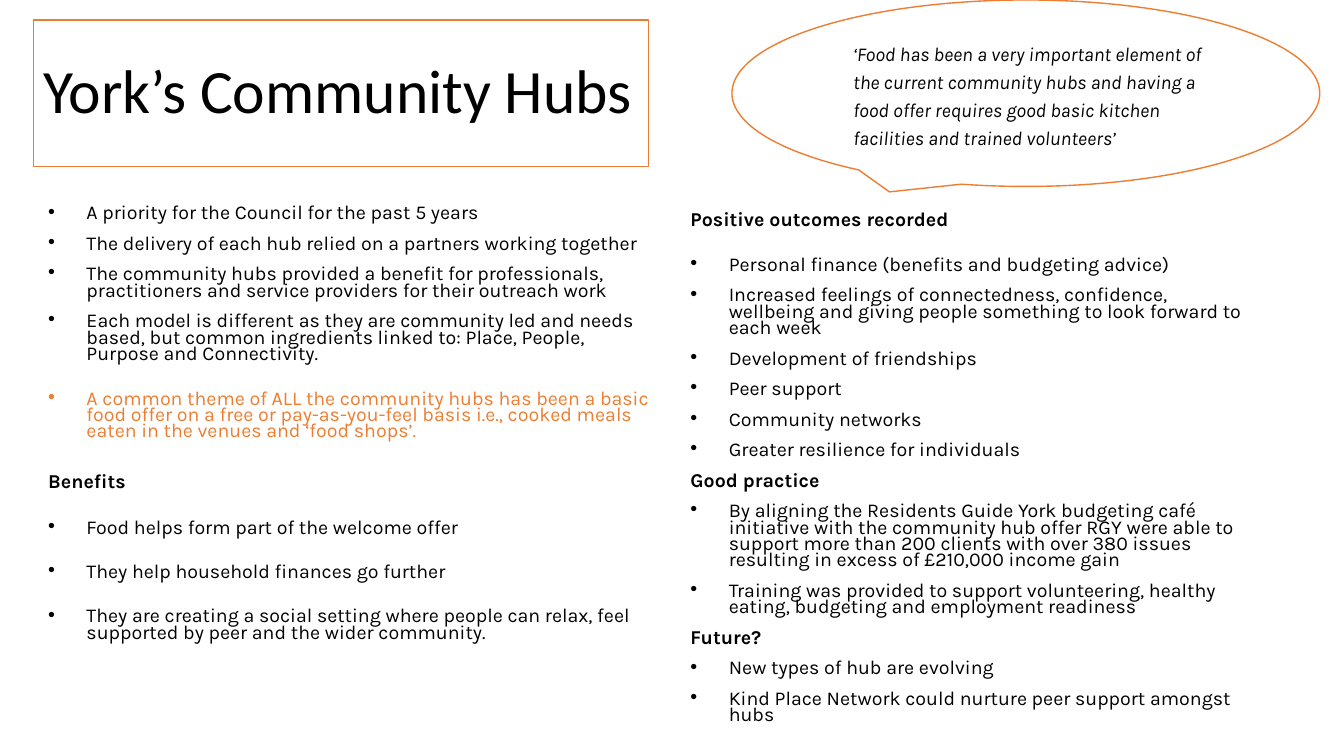
"""Build the York's Community Hubs slide with two text columns and a quote."""
from lxml.etree import SubElement
from pptx import Presentation
from pptx.dml.color import RGBColor
from pptx.enum.shapes import MSO_SHAPE
from pptx.enum.text import MSO_ANCHOR, PP_ALIGN
from pptx.oxml.ns import qn
from pptx.util import Inches, Pt

BLACK, WHITE, ORANGE = "000000", "FFFFFF", "ED7D31"


def color(value):
    return RGBColor.from_string(value)


def style(paragraph, text, font="Karla", size=14, ink=BLACK, spacing=None, before=0, after=0, indent=0, hanging=0):
    paragraph.text = text
    paragraph.alignment = PP_ALIGN.LEFT
    paragraph.font.name = font
    paragraph.font.size = Pt(size)
    paragraph.font.color.rgb = color(ink)
    paragraph.line_spacing = spacing
    paragraph.space_before = Pt(before)
    paragraph.space_after = Pt(after)
    properties = paragraph._p.get_or_add_pPr()
    properties.set("marL", str(Inches(indent)))
    properties.set("indent", str(Inches(-hanging)))
    if hanging:
        SubElement(properties, qn("a:buFont"), typeface="Arial")
        SubElement(properties, qn("a:buChar"), char="•")


prs = Presentation()
prs.slide_width = Inches(13.33)
prs.slide_height = Inches(7.5)
slide = prs.slides.add_slide(prs.slide_layouts[6])

title = slide.shapes.add_shape(MSO_SHAPE.RECTANGLE, Inches(0.33), Inches(0.2), Inches(6.1), Inches(1.45))
quote = slide.shapes.add_shape(MSO_SHAPE.OVAL_CALLOUT, Inches(7.26), Inches(0), Inches(5.83), Inches(1.85))
quote.adjustments[0] = -0.232
quote.adjustments[1] = 0.529
for panel in (title, quote):
    panel.shadow.inherit = False
    panel.fill.solid()
    panel.fill.fore_color.rgb = color(WHITE)
    panel.line.color.rgb = color(ORANGE)
    panel.line.width = Pt(1)
    panel.text_frame.word_wrap = True
    panel.text_frame.vertical_anchor = MSO_ANCHOR.MIDDLE

style(title.text_frame.paragraphs[0], "York’s Community Hubs", font="Calibri", size=44, spacing=0.9)
saying = quote.text_frame.paragraphs[0]
style(
    saying,
    "‘Food has been a very important element of the current community hubs and having a food offer "
    "requires good basic kitchen facilities and trained volunteers’",
    spacing=1.2, after=10, indent=0.25,
)
saying.font.italic = True

# Each entry: kind, space after, text
hubs_and_benefits = [
    ("bullet", 0, "A priority for the Council for the past 5 years"),
    ("bullet", 0, "The delivery of each hub relied on a partners working together"),
    ("bullet", 0, "The community hubs provided a benefit for professionals, practitioners and service "
     "providers for their outreach work"),
    ("bullet", 10, "Each model is different as they are community led and needs based, but common "
     "ingredients linked to: Place, People, Purpose and Connectivity."),
    ("highlight", 10, "A common theme of ALL the community hubs has been a basic food offer on a free or "
     "pay-as-you-feel basis i.e., cooked meals eaten in the venues and ‘food shops’."),
    ("heading", 10, "Benefits"),
    ("bullet", 10, "Food helps form part of the welcome offer"),
    ("bullet", 10, "They help household finances go further"),
    ("bullet", 10, "They are creating a social setting where people can relax, feel supported by peer and "
     "the wider community."),
]
outcomes_and_future = [
    ("heading", 10, "Positive outcomes recorded"),
    ("bullet", 0, "Personal finance (benefits and budgeting advice)"),
    ("bullet", 0, "Increased feelings of connectedness, confidence, wellbeing and giving people something "
     "to look forward to each week"),
    ("bullet", 0, "Development of friendships"),
    ("bullet", 0, "Peer support"),
    ("bullet", 0, "Community networks"),
    ("bullet", 0, "Greater resilience for individuals"),
    ("heading", 0, "Good practice"),
    ("bullet", 0, "By aligning the Residents Guide York budgeting café initiative with the community hub "
     "offer RGY were able to support more than 200 clients with over 380 issues resulting in excess of "
     "£210,000 income gain"),
    ("bullet", 0, "Training was provided to support volunteering, healthy eating, budgeting and employment "
     "readiness"),
    ("heading", 0, "Future?"),
    ("bullet", 0, "New types of hub are evolving"),
    ("bullet", 0, "Kind Place Network could nurture peer support amongst hubs"),
]

for left, width, entries in ((0.38, 6.2, hubs_and_benefits), (6.75, 5.67, outcomes_and_future)):
    column = slide.shapes.add_textbox(Inches(left), Inches(2), Inches(width), Inches(5.33)).text_frame
    column.word_wrap = True
    for number, (kind, after, text) in enumerate(entries):
        paragraph = column.add_paragraph() if number else column.paragraphs[0]
        heading = kind == "heading"
        hang = 0 if heading else 0.38
        style(
            paragraph, text,
            ink=ORANGE if kind == "highlight" else BLACK,
            spacing=None if heading and after else 0.7,
            before=10, after=after, indent=hang, hanging=hang,
        )
        paragraph.font.bold = heading

prs.save("out.pptx")
